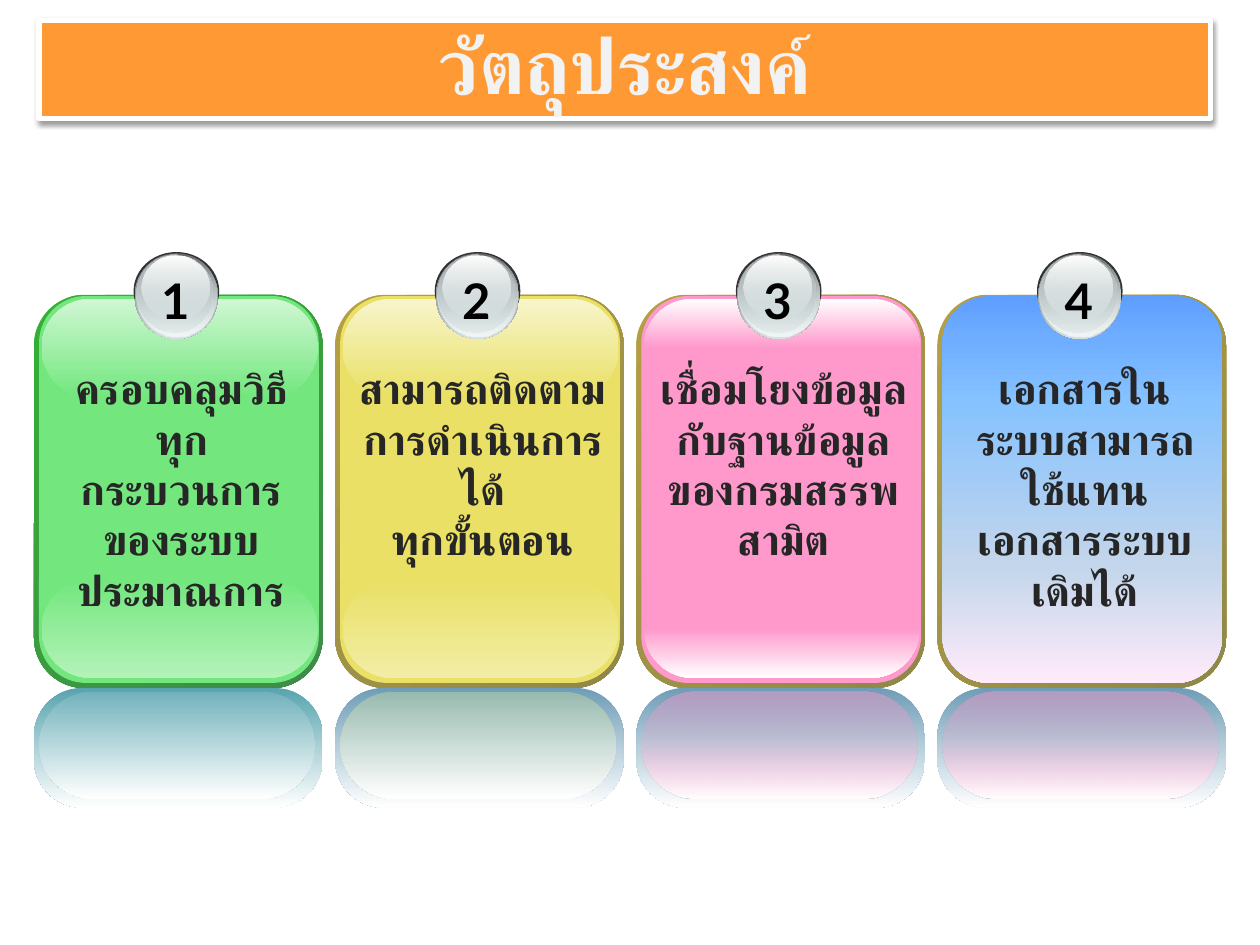
from lxml import etree
from pptx import Presentation
from pptx.dml.color import RGBColor
from pptx.enum import shapes, text
from pptx.oxml import ns, parse_xml
from pptx.util import Inches, Pt

FONT = "Lato"
RECT, OVAL = shapes.MSO_SHAPE.ROUNDED_RECTANGLE, shapes.MSO_SHAPE.OVAL
GOLD = [(0, "B59F43"), (100, "8F8849")]
MIST = [(0, "6F9DB7"), (100, "FFFFFF")]
PINK_MIST = [(0, "FF99CC", 46), (44, "FF99CC", 17), (100, "FFFFFF")]
PINK_GLOW = [(0, "FF99CC"), (50, "FF99CC"), (100, "FFFFFF")]

CARDS = [
    dict(words="ครอบคลุมวิธีทุกกระบวนการของระบบประมาณการ",
         rim=[(0, "34B034"), (100, "3F8B4A")], face="73E77E",
         top=[(0, "D0F7D4"), (100, "73E77E")], bottom=[(0, "73E77E"), (100, "B3F2B9")],
         mist=[(0, "58A4AE"), (100, "FFFFFF")], inner=[(0, "72B2BB"), (100, "FFFFFF")]),
    dict(words="สามารถติดตามการดำเนินการได้\nทุกขั้นตอน",
         rim=GOLD, face="E9E065",
         top=[(0, "F8F5CC"), (100, "E9E065")], bottom=[(0, "E9E065"), (100, "F2EDA6")],
         mist=MIST, inner=[(0, "98BAAF"), (100, "FFFFFF")]),
    dict(words="เชื่อมโยงข้อมูลกับฐานข้อมูลของกรมสรรพสามิต",
         rim=GOLD, face="FF99CC",
         top=[(0, "FFFFFF"), (50, "FF99CC"), (100, "FF99CC")], bottom=PINK_GLOW,
         mist=MIST, inner=PINK_MIST),
    dict(words="เอกสารในระบบสามารถใช้แทนเอกสารระบบเดิมได้",
         rim=GOLD,
         face=[(0, "5E9EFF"), (11, "6EADFF"), (27, "85C2FF"), (70, "C4D6EB"), (100, "FFEBFA")],
         top=None, bottom=None, mist=MIST, inner=PINK_MIST),
]

BADGE = [
    (0, 0, 0.68, 0.62, "333333"),
    (0.01, 0.01, 0.66, 0.68, [(0, "636869"), (100, "D6E1E2")]),
    (0.02, 0.01, 0.64, 0.66, [(0, "D6E1E2", 0), (100, "F1F5F5")]),
    (0.02, 0.02, 0.61, 0.62, [(0, "AAB2B3"), (100, "D6E1E2", 48)]),
    (0.06, 0.03, 0.54, 0.5, [(0, "FFFFFF"), (100, "D6E1E2", 38)]),
]


def color(value):
    """Turn a hex string into a colour."""
    return RGBColor.from_string(value)


def paint(sp, fill, angle=90):
    """Fill a shape with one colour or with (position, colour, opacity) stops."""
    if isinstance(fill, str):
        sp.fill.solid()
        sp.fill.fore_color.rgb = color(fill)
        return
    sp.fill.gradient()
    sp.fill.gradient_angle = 360 - angle
    stops = sp._element.spPr.find(".//" + ns.qn("a:gsLst"))
    for old in list(stops):
        stops.remove(old)
    for pos, value, *opacity in fill:
        gs = etree.SubElement(stops, ns.qn("a:gs"), pos=str(pos * 1000))
        rgb = etree.SubElement(gs, ns.qn("a:srgbClr"), val=value)
        if opacity:
            etree.SubElement(rgb, ns.qn("a:alpha"), val=str(opacity[0] * 1000))


def add_shape(parent, kind, x, y, w, h, fill, adj=None, angle=90):
    """Add a borderless, shadowless shape."""
    sp = parent.shapes.add_shape(kind, Inches(x), Inches(y), Inches(w), Inches(h))
    sp.shadow.inherit = False
    sp.line.fill.background()
    if adj is not None:
        sp.adjustments[0] = adj
    paint(sp, fill, angle)
    return sp


def style(p, size, value):
    """Centre a paragraph and set its bold font."""
    p.alignment = text.PP_ALIGN.CENTER
    p.font.name, p.font.size, p.font.bold = FONT, Pt(size), True
    p.font.color.rgb = color(value)


def add_text(parent, x, y, w, h, words, size, value, wrap=True):
    """Add a centred text box that grows with its text."""
    tf = parent.shapes.add_textbox(Inches(x), Inches(y), Inches(w), Inches(h)).text_frame
    tf.word_wrap = wrap
    tf.auto_size = text.MSO_AUTO_SIZE.SHAPE_TO_FIT_TEXT
    p = tf.paragraphs[0]
    p.text = words
    style(p, size, value)


def add_title(s, x, y, w, h):
    """Turn the title placeholder into a rounded orange banner."""
    sp = s.shapes.title
    sp.left, sp.top, sp.width, sp.height = Inches(x), Inches(y), Inches(w), Inches(h)
    sp._element.spPr.append(parse_xml(
        f'<a:prstGeom {ns.nsdecls("a")} prst="roundRect"><a:avLst/></a:prstGeom>'))
    paint(sp, "FF9933")
    sp.line.color.rgb = color("FFFFFF")
    sp.line.width = Pt(3)
    sp._element.spPr.append(parse_xml(
        f'<a:effectLst {ns.nsdecls("a")}><a:outerShdw blurRad="{Pt(3.1)}" dist="{Pt(1.6)}" '
        'dir="5400000" rotWithShape="0"><a:srgbClr val="000000"><a:alpha val="38000"/>'
        '</a:srgbClr></a:outerShdw></a:effectLst>'))
    tf = sp.text_frame
    tf.word_wrap = True
    tf.auto_size = text.MSO_AUTO_SIZE.NONE
    tf.vertical_anchor = text.MSO_ANCHOR.MIDDLE
    p = tf.paragraphs[0]
    p.text = "วัตถุประสงค์"
    p.line_spacing = 0.9
    style(p, 44, "F2F2F2")


def add_badge(parent, x, y, number):
    """Add the glossy numbered ball."""
    for dx, dy, w, h, fill in BADGE:
        add_shape(parent, OVAL, x + dx, y + dy, w, h, fill)
    add_text(parent, x + 0.12, y + 0.1, 0.42, 0.57, str(number), 28, "000000", wrap=False)


def add_card(s, x, y, number, card):
    """Add one card with its badge, wording and reflection."""
    grp = s.shapes.add_group_shape()
    add_shape(grp, RECT, x, y, 2.29, 3.12, card["rim"], 0.175, 45)
    add_shape(grp, RECT, x + 0.04, y + 0.01, 2.22, 3.07, card["face"], 0.167)
    for dy, glow in ((2.26, card["bottom"]), (0.03, card["top"])):
        if glow:
            add_shape(grp, RECT, x + 0.06, y + dy, 2.19, 0.78, glow, 0.5)
    add_badge(grp, x + 0.79, y - 0.34, number)
    add_text(grp, x + 0.08, y + 0.49, 2.18, 1.31, card["words"], 24, "262626")
    add_shape(grp, RECT, x, y + 3.12, 2.29, 0.95, card["mist"], 0.404)
    add_shape(grp, RECT, x + 0.04, y + 3.15, 2.19, 0.85, card["inner"], 0.5)


def main():
    """Build the objectives slide."""
    prs = Presentation()
    prs.slide_width, prs.slide_height = Inches(10), Inches(7.5)
    s = prs.slides.add_slide(prs.slide_layouts[5])
    add_title(s, 0.31, 0.16, 9.3, 0.78)
    for i, card in enumerate(CARDS):
        add_card(s, 0.27 + 2.39 * i, 2.34, i + 1, card)
    prs.save("out.pptx")


if __name__ == "__main__":
    main()
